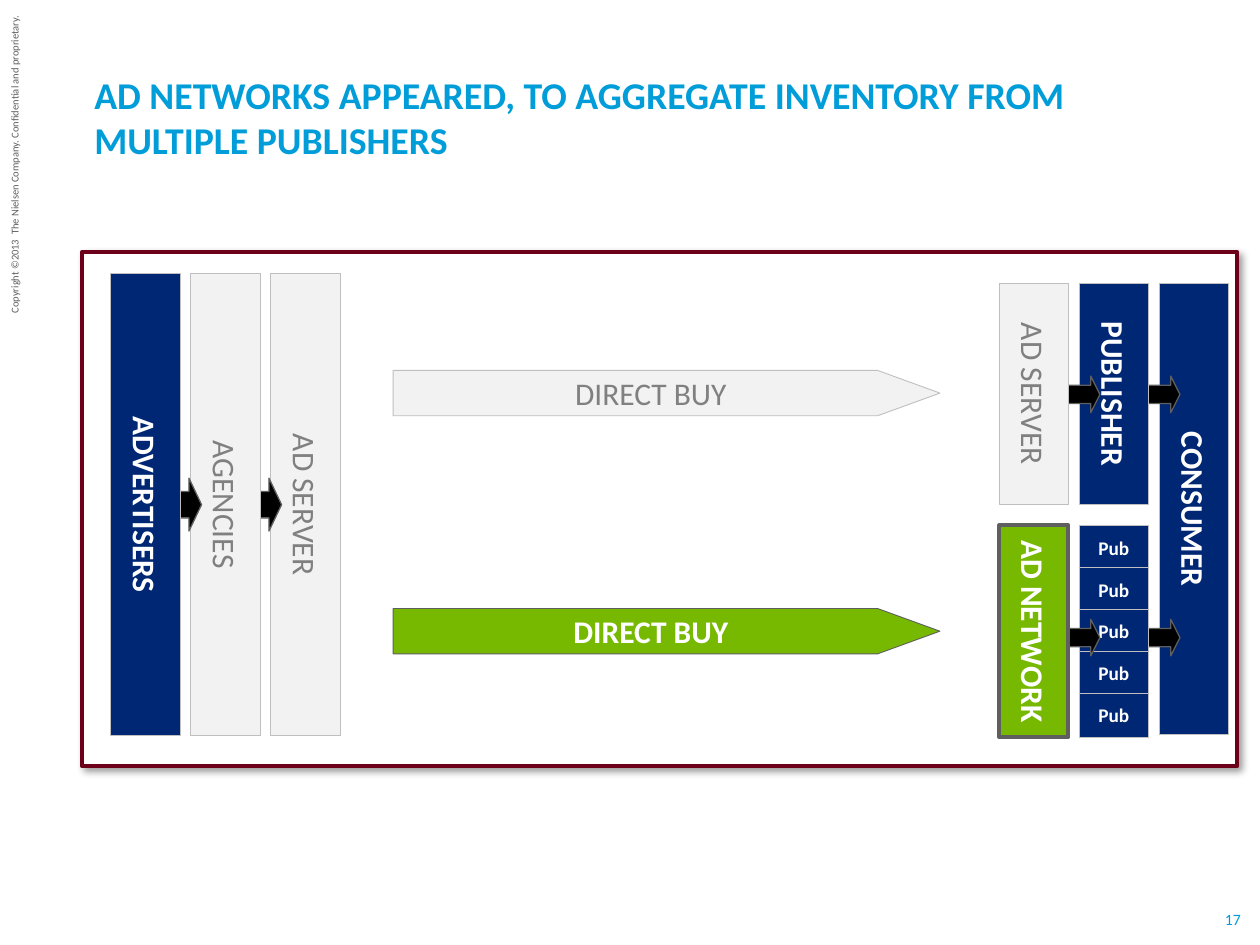
from dataclasses import dataclass

from lxml import etree
from pptx import Presentation
from pptx.dml.color import RGBColor
from pptx.enum.shapes import MSO_SHAPE as Preset
from pptx.enum.text import MSO_ANCHOR as Anchor, PP_ALIGN as Align
from pptx.oxml.ns import qn
from pptx.util import Inches, Pt


@dataclass(frozen=True)
class Style:
    fill: str
    line: str
    text: str
    bold: bool = False
    line_width: float = 0.5


class Theme:
    font = "Calibri"
    blue, grey, white, black, maroon = "009DD9", "5F5F5F", "FFFFFF", "000000", "6C001B"
    title_size, label_size, pub_size, number_size, copyright_size = 21.6, 18, 11, 9, 6
    party = Style("002774", "BFBFBF", white, True)
    service = Style("F2F2F2", "BFBFBF", "808080")
    network = Style("76B900", grey, white, True, 2.25)
    network_buy = Style("76B900", grey, white, True)
    flow = Style(black, grey, white, line_width=0.75)
    frame = Style(white, maroon, black, line_width=2.25)


COLUMN_WIDTH = Inches(0.55)
COLUMN_PITCH = Inches(1.27) // 2


def write(frame, text, size, color, bold=False, align=Align.LEFT):
    paragraph = frame.paragraphs[0]
    paragraph.alignment = align
    run = paragraph.add_run()
    run.text = text
    run.font.name = Theme.font
    run.font.size = Pt(size)
    run.font.bold = bold
    run.font.color.rgb = RGBColor.from_string(color)


def add_text(slide, box, text, size, color, margins, bold=False,
             align=Align.LEFT, anchor=Anchor.TOP, wrap=False):
    """Add a text box; margins are (horizontal, vertical)."""
    shape = slide.shapes.add_textbox(*box)
    frame = shape.text_frame
    frame.word_wrap = wrap
    frame.vertical_anchor = anchor
    frame.margin_left = frame.margin_right = margins[0]
    frame.margin_top = frame.margin_bottom = margins[1]
    write(frame, text, size, color, bold, align)
    return shape


def add_block(slide, preset, box, style, text=None, size=Theme.label_size, vertical=False):
    shape = slide.shapes.add_shape(preset, *box)
    shape.shadow.inherit = False
    shape.fill.solid()
    shape.fill.fore_color.rgb = RGBColor.from_string(style.fill)
    shape.line.color.rgb = RGBColor.from_string(style.line)
    shape.line.width = Pt(style.line_width)
    if text:
        frame = shape.text_frame
        frame.word_wrap = True
        frame.vertical_anchor = Anchor.MIDDLE
        if vertical:
            shape.element.txBody.find(qn("a:bodyPr")).set("vert", "vert")
        write(frame, text, size, style.text, style.bold, Align.CENTER)
    return shape


def add_column(slide, left, top, height, text, style):
    add_block(slide, Preset.RECTANGLE, (left, top, COLUMN_WIDTH, height), style, text,
              vertical=True)


def add_flow_arrow(slide, center_x, center_y, thickness):
    length = Inches(0.4)
    box = (center_x - thickness // 2, center_y - length // 2, thickness, length)
    arrow = add_block(slide, Preset.DOWN_ARROW, box, Theme.flow)
    arrow.rotation = 270
    arrow.adjustments[0], arrow.adjustments[1] = 0.5, 0.25


def add_frame(slide, box):
    shape = add_block(slide, Preset.RECTANGLE, box, Theme.frame)
    effects = shape.element.spPr.find(qn("a:effectLst"))
    shadow = etree.SubElement(effects, qn("a:outerShdw"), blurRad=str(Pt(4)),
                              dist=str(Pt(3)), dir="2700000", algn="tl", rotWithShape="0")
    color = etree.SubElement(shadow, qn("a:srgbClr"), val=Theme.black)
    etree.SubElement(color, qn("a:alpha"), val="40000")


def add_buys(slide, left, top, width):
    buys = ((Inches(1.89), Theme.network_buy), (0, Theme.service))
    for offset, style in buys:
        box = (left, top + offset, width, Inches(0.36))
        arrow = add_block(slide, Preset.PENTAGON, box, style, "DIRECT BUY")
        arrow.adjustments[0] = 1.375


def add_buyers(slide, left, top, height):
    """Stack columns right to left, so each flow arrow emerges from behind its source."""
    columns = (("ADVERTISERS", Theme.party), ("AGENCIES", Theme.service),
               ("AD SERVER", Theme.service))
    for index, (text, style) in reversed(list(enumerate(columns))):
        column_left = left + index * COLUMN_PITCH
        if index < len(columns) - 1:
            add_flow_arrow(slide, column_left + COLUMN_WIDTH - Inches(0.03),
                           top + height // 2, Inches(0.42))
        add_column(slide, column_left, top, height, text, style)


def add_publishers(slide, left, top, height):
    """Stack columns right to left, so each flow arrow emerges from behind its source."""
    publisher_left = left + COLUMN_PITCH
    direct_height = Inches(1.75)
    network_top = top + Inches(1.92)
    direct_y, network_y = top + Inches(0.88), top + Inches(2.81)

    def add_arrow(source_left, center_y):
        add_flow_arrow(slide, source_left + COLUMN_WIDTH + Inches(0.05), center_y, Inches(0.29))

    add_column(slide, left + 2 * COLUMN_PITCH, top, height, "CONSUMER", Theme.party)
    add_arrow(publisher_left, direct_y)
    add_column(slide, publisher_left, top, direct_height, "PUBLISHER", Theme.party)
    add_arrow(left, direct_y)
    add_column(slide, left, top, direct_height, "AD SERVER", Theme.service)

    add_arrow(publisher_left, network_y)
    for index in range(5):
        pub_top = network_top + index * Inches(1.33) // 4
        add_block(slide, Preset.RECTANGLE, (publisher_left, pub_top, COLUMN_WIDTH, Inches(0.35)),
                  Theme.party, "Pub", Theme.pub_size)
    add_arrow(left, network_y)
    add_column(slide, left, network_top, Inches(1.68), "AD NETWORK", Theme.network)


def add_diagram(slide, left, top, width, height):
    add_frame(slide, (left, top, width, height))
    add_buys(slide, left + Inches(2.47), top + Inches(0.94), Inches(4.34))
    add_buyers(slide, left + Inches(0.23), top + Inches(0.17), Inches(3.67))
    add_publishers(slide, left + Inches(7.28), top + Inches(0.25), Inches(3.58))


def add_page_text(slide):
    copyright_line = add_text(
        slide, (Inches(-1.18), Inches(1.19), Inches(2.59), Inches(0.2)),
        "Copyright ©2013\u00a0 The Nielsen Company. Confidential and proprietary.".replace("\u00a0", " "),
        Theme.copyright_size, Theme.grey, (Inches(0.1), Inches(0.05)))
    copyright_line.rotation = 270
    add_text(slide, (Inches(9.71), Inches(7.22), Inches(0.15), Inches(0.15)), "17",
             Theme.number_size, Theme.blue, (0, 0), align=Align.CENTER, anchor=Anchor.MIDDLE)
    add_text(slide, (Inches(0.65), Inches(0.63), Inches(8.8), Inches(0.66)),
             "AD NETWORKS APPEARED, TO AGGREGATE INVENTORY FROM MULTIPLE PUBLISHERS",
             Theme.title_size, Theme.blue, (Inches(0.1), 0), bold=True,
             anchor=Anchor.BOTTOM, wrap=True)


def main():
    presentation = Presentation()
    presentation.slide_width, presentation.slide_height = Inches(10), Inches(7.5)
    slide = presentation.slides.add_slide(presentation.slide_layouts[6])
    add_page_text(slide)
    add_diagram(slide, Inches(0.65), Inches(2), Inches(9.17), Inches(4.08))
    presentation.save("out.pptx")


if __name__ == "__main__":
    main()
